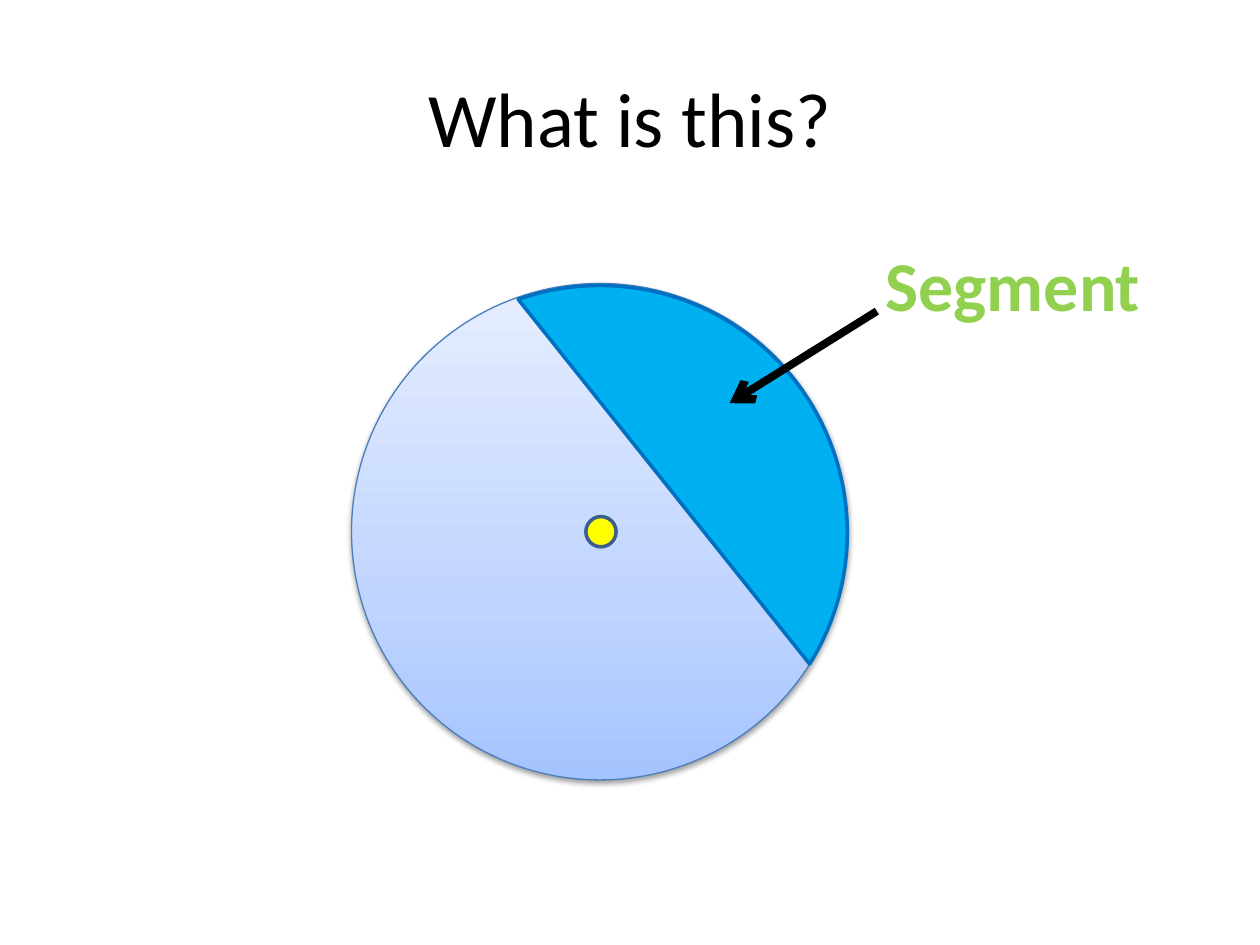
import copy

import pptx
import pptx.dml.color
import pptx.enum.shapes
import pptx.enum.text
import pptx.oxml
import pptx.oxml.ns
import pptx.util

Pt = pptx.util.Pt
SHAPES = pptx.enum.shapes.MSO_SHAPE
COLORS = {
    "text": "000000",
    "label": "92D050",
    "circle_line": "4B7EBC",
    "centre": "FFFF00",
    "centre_line": "3A5F8C",
    "segment": "00B0F0",
    "segment_line": "0070C0",
}
CIRCLE_STOPS = [(0, "A4C4FF"), (0.35, "BFD4FF"), (1, "E6EEFF")]


def rgb(value):
    """Turn a hex string into a colour."""
    return pptx.dml.color.RGBColor.from_string(value)


class CircleSlide:
    """Holds the style and the slide being drawn."""

    font = "Calibri"

    def __init__(self, slide):
        """Keep the slide to draw on."""
        self.slide = slide

    def text(self, wording, box, size, color, bold=False, centred=False):
        """Add a line of text in a box."""
        area = self.slide.shapes.add_textbox(*map(Pt, box))
        frame = area.text_frame
        frame.word_wrap = True
        frame.text = wording
        paragraph = frame.paragraphs[0]
        if centred:
            frame.vertical_anchor = pptx.enum.text.MSO_ANCHOR.MIDDLE
            paragraph.alignment = pptx.enum.text.PP_ALIGN.CENTER
        font = paragraph.runs[0].font
        font.name, font.size, font.bold = self.font, Pt(size), bold
        font.color.rgb = rgb(COLORS[color])

    def shape(self, preset, box, line, width, fill=None):
        """Add an outlined preset shape, filled when a colour is named."""
        part = self.slide.shapes.add_shape(preset, *map(Pt, box))
        part.shadow.inherit = False
        part.line.color.rgb = rgb(COLORS[line])
        part.line.width = Pt(width)
        if fill:
            part.fill.solid()
            part.fill.fore_color.rgb = rgb(COLORS[fill])
        return part

    def gradient(self, part, stops):
        """Fill a shape with a gradient that rises from bottom to top."""
        part.fill.gradient()
        part.fill.gradient_angle = 90
        stop_list = part._element.spPr.find(".//" + pptx.oxml.ns.qn("a:gsLst"))
        while len(stop_list) < len(stops):
            stop_list.append(copy.deepcopy(stop_list[0]))
        for stop, (position, color) in zip(part.fill.gradient_stops, stops):
            stop.position = position
            stop.color.rgb = rgb(color)

    def drop_shadow(self, part, blur, distance, opacity):
        """Cast a soft black shadow straight down."""
        effects = part._element.spPr.find(pptx.oxml.ns.qn("a:effectLst"))
        effects.append(pptx.oxml.parse_xml(
            f'<a:outerShdw {pptx.oxml.ns.nsdecls("a")} blurRad="{Pt(blur)}" '
            f'dist="{Pt(distance)}" dir="5400000" rotWithShape="0">'
            f'<a:srgbClr val="000000"><a:alpha val="{opacity * 1000}"/>'
            '</a:srgbClr></a:outerShdw>'))

    def arrow(self, start, end, color, width):
        """Add a straight arrow with an open head at its end."""
        pointer = self.slide.shapes.add_connector(
            pptx.enum.shapes.MSO_CONNECTOR.STRAIGHT, *map(Pt, start + end))
        pointer.line.color.rgb = rgb(COLORS[color])
        pointer.line.width = Pt(width)
        namespace = pptx.oxml.ns.nsdecls("a")
        pointer.line._get_or_add_ln().append(
            pptx.oxml.parse_xml(f'<a:tailEnd {namespace} type="arrow"/>'))
        pointer._element.spPr.append(
            pptx.oxml.parse_xml(f"<a:effectLst {namespace}/>"))


def main():
    """Build the slide and save it."""
    deck = pptx.Presentation()
    deck.slide_width, deck.slide_height = Pt(720), Pt(540)
    page = CircleSlide(deck.slides.add_slide(deck.slide_layouts[6]))

    page.text("What is this?", (36, 21.6, 648, 90), 44, "text", centred=True)

    circle = page.shape(SHAPES.OVAL, (200.9, 162, 283.7, 283.7), "circle_line", 0.75)
    page.gradient(circle, CIRCLE_STOPS)
    page.drop_shadow(circle, 3.1, 1.6, 38)
    page.shape(SHAPES.OVAL, (334.8, 295.2, 17.3, 17.3), "centre_line", 2, "centre")

    page.text("Segment", (499, 134.6, 221, 55.4), 40, "label", bold=True)

    segment = page.shape(
        SHAPES.CHORD, (201.6, 163.2, 282.6, 282.4), "segment_line", 2, "segment")
    segment.rotation = 53
    segment.adjustments[0] = 118.59
    segment.adjustments[1] = 203.46

    page.arrow((501.1, 177.8), (416.9, 230.4), "text", 4.5)

    deck.save("out.pptx")


if __name__ == "__main__":
    main()
